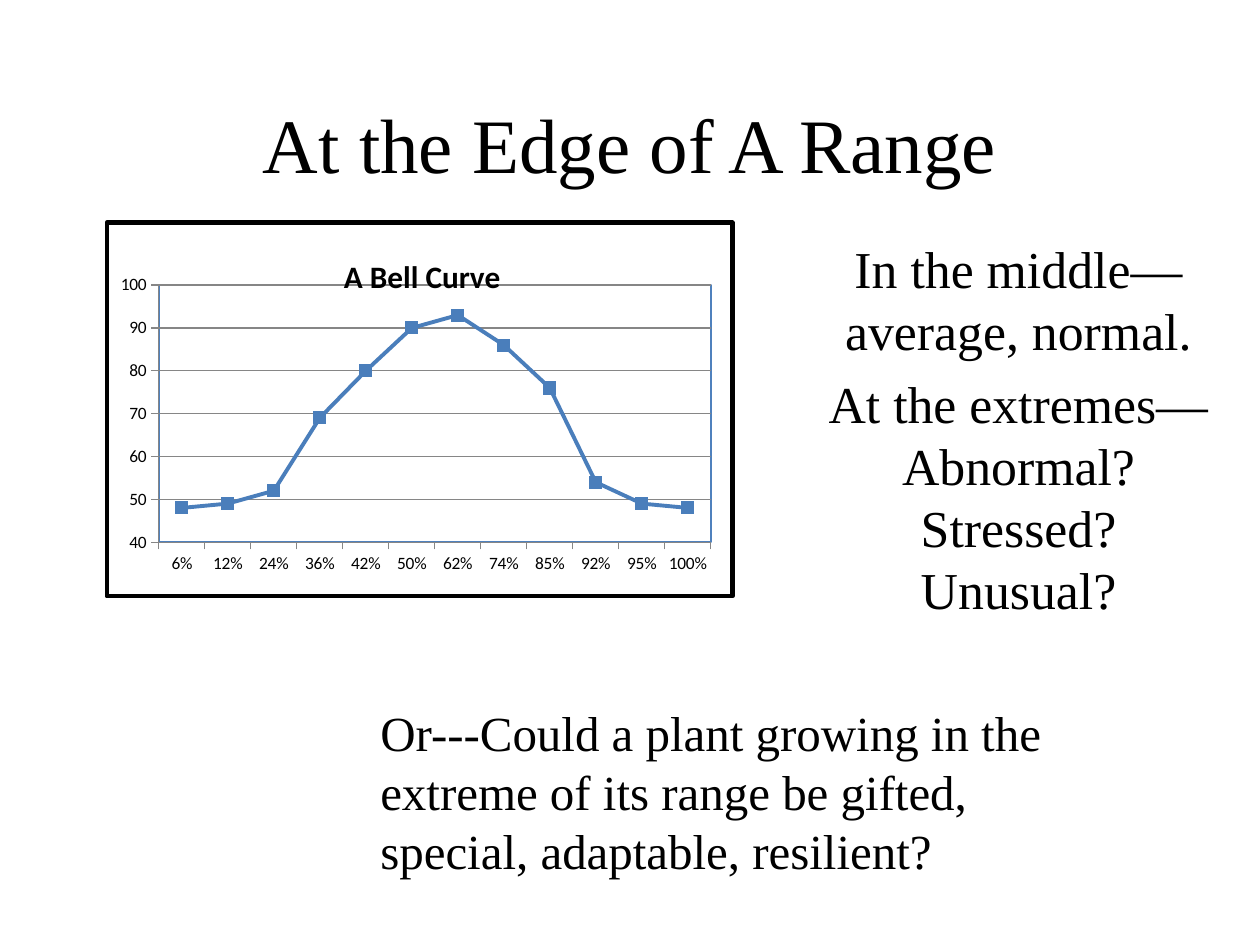
from lxml import etree
from pptx import Presentation
from pptx import util as u
from pptx.chart.data import CategoryChartData
from pptx.dml.color import RGBColor
from pptx.enum import chart as charts, text
from pptx.oxml import parse_xml
from pptx.oxml.ns import nsdecls, qn

BLACK = RGBColor(0x00, 0x00, 0x00)
GRAY = RGBColor(0x86, 0x86, 0x86)
BLUE = RGBColor(0x4F, 0x81, 0xBD)
LINE_BLUE = RGBColor(0x4A, 0x7E, 0xBB)

BELL_CURVE = {
    0.06: 48, 0.12: 49, 0.24: 52, 0.36: 69, 0.42: 80, 0.5: 90,
    0.62: 93, 0.74: 86, 0.85: 76, 0.92: 54, 0.95: 49, 1: 48,
}


def apply(target, values):
    for name, value in values.items():
        setattr(target, name, value)


def outline(line, color, width):
    line.color.rgb = color
    line.width = u.Pt(width)


def layout(**values):
    element = parse_xml(f"<c:layout {nsdecls('c')}><c:manualLayout/></c:layout>")
    for tag, value in values.items():
        etree.SubElement(element[0], qn(f"c:{tag}")).set("val", str(value))
    return element


def frame(color, width):
    return parse_xml(
        f"<c:spPr {nsdecls('c', 'a')}><a:noFill/><a:ln w=\"{u.Pt(width)}\">"
        f"<a:solidFill><a:srgbClr val=\"{color}\"/></a:solidFill></a:ln></c:spPr>"
    )


class SlideBuilder:
    text_font = "Times New Roman"
    chart_font = "Calibri"

    def __init__(self, presentation):
        self.slide = presentation.slides.add_slide(presentation.slide_layouts[6])

    def add_text(self, box, paragraphs, size, align=text.PP_ALIGN.LEFT,
                 anchor=text.MSO_ANCHOR.TOP, gap=0):
        shape = self.slide.shapes.add_textbox(*map(u.Inches, box))
        text_frame = shape.text_frame
        apply(text_frame, {"word_wrap": True, "vertical_anchor": anchor})
        text_frame.text = "\n".join(paragraphs)
        for index, paragraph in enumerate(text_frame.paragraphs):
            apply(paragraph, {"alignment": align, "space_before": u.Pt(gap if index else 0)})
            apply(paragraph.font, {"name": self.text_font, "size": u.Pt(size)})
            paragraph.font.color.rgb = BLACK

    def add_line_chart(self, box, title, points):
        data = CategoryChartData()
        data.categories = list(points)
        data.categories.number_format = "0%"
        data.add_series("Series 1", list(points.values()))
        chart = self.slide.shapes.add_chart(
            charts.XL_CHART_TYPE.LINE_MARKERS, *map(u.Inches, box), data).chart
        apply(chart, {"has_legend": False, "has_title": True})
        apply(chart.font, {"name": self.chart_font, "size": u.Pt(10)})
        chart.font.color.rgb = BLACK
        self.style_title(chart.chart_title, title)
        self.style_axes(chart)
        self.style_series(chart.plots[0])
        self.style_areas(chart.element.find(qn("c:chart")))

    def style_title(self, chart_title, title):
        chart_title.include_in_layout = False
        chart_title.text_frame.text = title
        font = chart_title.text_frame.paragraphs[0].runs[0].font
        apply(font, {"name": self.chart_font, "size": u.Pt(18), "bold": True})
        font.color.rgb = BLACK

    def style_axes(self, chart):
        for axis in (chart.category_axis, chart.value_axis):
            axis.major_tick_mark = charts.XL_TICK_MARK.OUTSIDE
            outline(axis.format.line, GRAY, 0.75)
        apply(chart.category_axis.tick_labels,
              {"number_format": "0%", "number_format_is_linked": False})
        apply(chart.value_axis, {"minimum_scale": 40, "maximum_scale": 100,
                                 "major_unit": 10, "has_major_gridlines": True})
        outline(chart.value_axis.major_gridlines.format.line, GRAY, 0.75)

    def style_series(self, plot):
        plot.vary_by_categories = False
        series = plot.series[0]
        series.smooth = False
        outline(series.format.line, LINE_BLUE, 2.25)
        apply(series.marker, {"style": charts.XL_MARKER_STYLE.SQUARE, "size": 7})
        series.marker.format.fill.solid()
        series.marker.format.fill.fore_color.rgb = BLUE
        outline(series.marker.format.line, LINE_BLUE, 0.75)

    def style_areas(self, chart_element):
        chart_element.addnext(frame(BLACK, 2.75))
        title = chart_element.find(qn("c:title"))
        plot_area = chart_element.find(qn("c:plotArea"))
        for parent in (title, plot_area):
            for old in parent.findall(qn("c:layout")):
                parent.remove(old)
        title.find(qn("c:tx")).addnext(layout(xMode="edge", yMode="edge", x=0.37, y=0.07))
        plot_area.insert(0, layout(layoutTarget="inner", xMode="edge", yMode="edge",
                                   x=0.083, y=0.167, w=0.883, h=0.689))
        plot_area.append(frame(BLUE, 1))


def main():
    presentation = Presentation()
    apply(presentation, {"slide_width": u.Inches(10), "slide_height": u.Inches(7.5)})
    builder = SlideBuilder(presentation)
    center = text.PP_ALIGN.CENTER
    builder.add_text((0.75, 0.33, 8.5, 1.61), ["At the Edge of A Range"], 44,
                     center, text.MSO_ANCHOR.MIDDLE)
    builder.add_text((6.42, 1.83, 3.33, 3.42),
                     ["In the middle—average, normal.",
                      "At the extremes—Abnormal? Stressed? Unusual?"],
                     29.6, center, gap=6)
    builder.add_line_chart((0.83, 1.75, 5, 3), "A Bell Curve", BELL_CURVE)
    builder.add_text((2.92, 5.53, 5.75, 1.51),
                     ["Or---Could a plant growing in the extreme of its range "
                      "be gifted, special, adaptable, resilient?"], 28)
    presentation.save("out.pptx")


if __name__ == "__main__":
    main()
